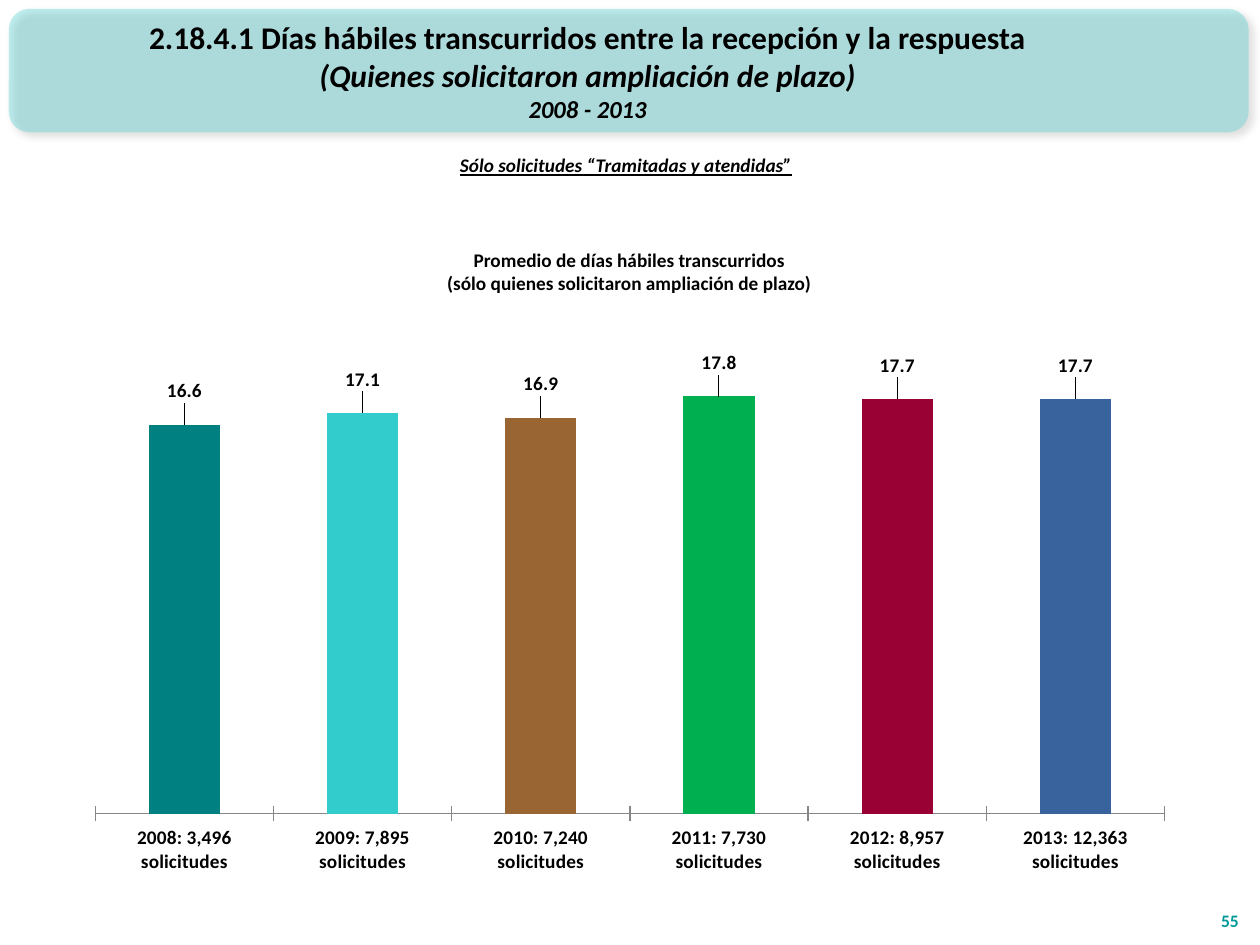
from lxml.etree import SubElement
from pptx import Presentation
from pptx.chart.data import CategoryChartData
from pptx.dml.color import RGBColor
from pptx.enum.chart import XL_CHART_TYPE, XL_LABEL_POSITION, XL_TICK_MARK
from pptx.enum.shapes import MSO_SHAPE
from pptx.enum.text import MSO_ANCHOR, PP_ALIGN
from pptx.oxml import parse_xml
from pptx.oxml.ns import nsdecls, qn
from pptx.util import Inches, Pt

FONT = "Calibri"
BLACK = "000000"
REQUESTS = [
    ("2008: 3,496", 16.6, "008080"),
    ("2009: 7,895", 17.1, "33CCCC"),
    ("2010: 7,240", 16.9, "996633"),
    ("2011: 7,730", 17.8, "00B050"),
    ("2012: 8,957", 17.7, "990033"),
    ("2013: 12,363", 17.7, "39639D"),
]


def color(value):
    return RGBColor.from_string(value)


def set_font(font, size, fill=BLACK, italic=False, underline=False):
    font.name = FONT
    font.size = Pt(size)
    font.bold = True
    font.italic = italic
    font.underline = underline
    font.color.rgb = color(fill)


def add_text(slide, box, lines, align=PP_ALIGN.CENTER, anchor=MSO_ANCHOR.TOP):
    frame = slide.shapes.add_textbox(*map(Inches, box)).text_frame
    frame.word_wrap = True
    frame.vertical_anchor = anchor
    for index, (text, style) in enumerate(lines):
        paragraph = frame.paragraphs[0] if index == 0 else frame.add_paragraph()
        paragraph.alignment = align
        run = paragraph.add_run()
        run.text = text
        set_font(run.font, **style)


def add_banner(slide, box):
    shape = slide.shapes.add_shape(MSO_SHAPE.ROUNDED_RECTANGLE, *map(Inches, box))
    shape.fill.solid()
    shape.fill.fore_color.rgb = color("33CCCC")
    shape.line.fill.background()
    properties = shape.element.spPr
    fill = properties.find(qn("a:solidFill"))
    SubElement(fill[0], qn("a:alpha"), val="30000")
    properties.append(parse_xml(
        f'<a:effectLst {nsdecls("a")}>'
        f'<a:outerShdw blurRad="{Pt(4)}" dist="{Pt(3)}" dir="2700000" algn="tl" rotWithShape="0">'
        '<a:srgbClr val="000000"><a:alpha val="40000"/></a:srgbClr>'
        '</a:outerShdw></a:effectLst>'
    ))
    left, top, width, height = box
    add_text(slide, (left + 0.01, top + 0.02, width - 0.67, height - 0.04), [
        ("2.18.4.1 Días hábiles transcurridos entre la recepción y la respuesta", {"size": 18}),
        ("(Quienes solicitaron ampliación de plazo)", {"size": 18, "italic": True}),
        ("2008 - 2013", {"size": 14, "italic": True}),
    ], anchor=MSO_ANCHOR.MIDDLE)


def manual_layout(content):
    return parse_xml(
        f'<c:layout {nsdecls("c")}><c:manualLayout>{content}</c:manualLayout></c:layout>'
    )


def add_days_chart(slide, box):
    data = CategoryChartData(number_format="0.0")
    data.categories = [f"{label}\nsolicitudes" for label, _, _ in REQUESTS]
    data.add_series("Días hábiles", [days for _, days, _ in REQUESTS])
    chart = slide.shapes.add_chart(
        XL_CHART_TYPE.COLUMN_CLUSTERED, *map(Inches, box), data
    ).chart
    chart.has_legend = False
    chart.has_title = False
    set_font(chart.font, 11)

    value_axis = chart.value_axis
    value_axis.minimum_scale = 0
    value_axis.maximum_scale = 20
    value_axis.major_unit = 2.5
    value_axis.has_major_gridlines = False
    value_axis.visible = False
    category_axis = chart.category_axis
    category_axis.major_tick_mark = XL_TICK_MARK.CROSS
    category_axis.format.line.color.rgb = color("868686")

    plot = chart.plots[0]
    plot.gap_width = 150
    plot.vary_by_categories = False
    series = plot.series[0]
    series.format.fill.solid()
    series.format.fill.fore_color.rgb = color(REQUESTS[0][2])
    labels = series.data_labels
    labels.show_value = True
    labels.number_format = "0.0"
    labels.number_format_is_linked = False
    labels.position = XL_LABEL_POSITION.OUTSIDE_END
    for index, (_, _, fill) in enumerate(REQUESTS):
        point = series.points[index]
        point.format.fill.solid()
        point.format.fill.fore_color.rgb = color(fill)
        point.data_label.position = XL_LABEL_POSITION.OUTSIDE_END
    for label in chart.element.iter(qn("c:dLbl")):
        label.find(qn("c:idx")).addnext(manual_layout('<c:x val="0"/><c:y val="-0.03"/>'))

    plot_area = next(chart.element.iter(qn("c:plotArea")))
    for layout in plot_area.findall(qn("c:layout")):
        plot_area.remove(layout)
    plot_area.insert(0, manual_layout(
        '<c:layoutTarget val="inner"/><c:xMode val="edge"/><c:yMode val="edge"/>'
        '<c:x val="0.02"/><c:y val="0.02"/><c:w val="0.96"/><c:h val="0.85"/>'
    ))


def main():
    presentation = Presentation()
    presentation.slide_width = Inches(10)
    presentation.slide_height = Inches(7.5)
    slide = presentation.slides.add_slide(presentation.slide_layouts[6])
    add_banner(slide, (0.07, 0.07, 9.84, 0.98))
    add_text(slide, (1.35, 1.17, 7.24, 0.29), [
        ("Sólo solicitudes “Tramitadas y atendidas”",
         {"size": 11, "italic": True, "underline": True}),
    ])
    add_text(slide, (9.53, 7.04, 0.4, 0.4), [("55", {"size": 10, "fill": "009999"})],
             align=PP_ALIGN.RIGHT, anchor=MSO_ANCHOR.BOTTOM)
    add_days_chart(slide, (0.58, 2.65, 8.84, 4.38))
    add_text(slide, (2.95, 1.92, 4.09, 0.47), [
        ("Promedio de días hábiles transcurridos", {"size": 11}),
        ("(sólo quienes solicitaron ampliación de plazo)", {"size": 11}),
    ])
    presentation.save("out.pptx")


if __name__ == "__main__":
    main()
